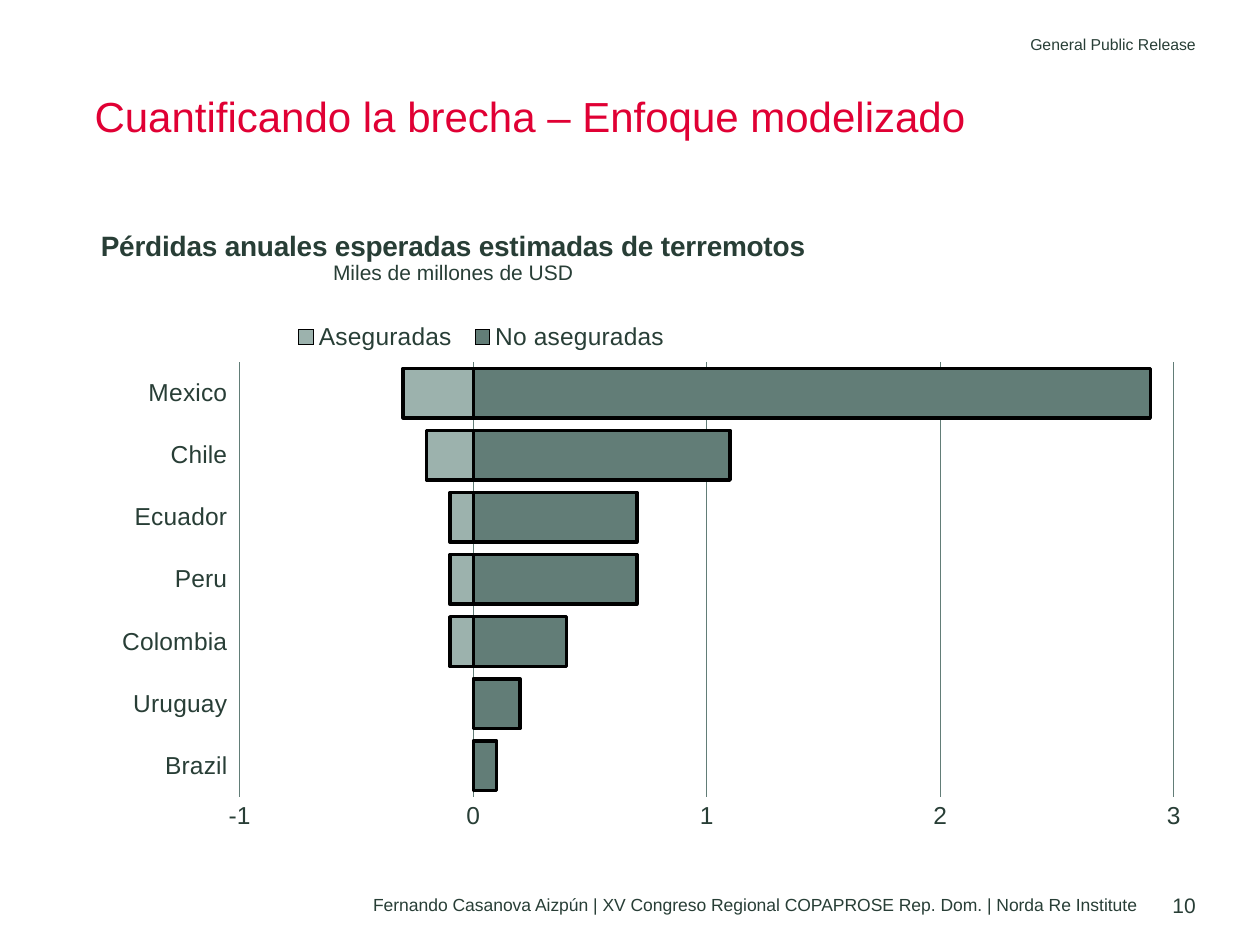
from lxml import etree
from pptx import Presentation
from pptx.chart.data import CategoryChartData
from pptx.dml.color import RGBColor
from pptx.enum.chart import XL_CHART_TYPE, XL_LEGEND_POSITION, XL_TICK_LABEL_POSITION, XL_TICK_MARK
from pptx.enum.text import MSO_ANCHOR, PP_ALIGN
from pptx.oxml.ns import qn
from pptx.util import Inches, Pt

STACKED = XL_CHART_TYPE.BAR_STACKED
LEGEND_TOP = XL_LEGEND_POSITION.TOP
LABELS_LOW = XL_TICK_LABEL_POSITION.LOW
NO_TICK = XL_TICK_MARK.NONE
TOP, BOTTOM = MSO_ANCHOR.TOP, MSO_ANCHOR.BOTTOM
LEFT, CENTER, RIGHT = PP_ALIGN.LEFT, PP_ALIGN.CENTER, PP_ALIGN.RIGHT
color = RGBColor.from_string
INK, RED, PALE, SAGE = "283E36", "E00034", "9CB2AD", "627D77"


def write(frame, text, size, ink, align, anchor):
    frame.margin_left = frame.margin_right = frame.margin_top = frame.margin_bottom = 0
    frame.word_wrap = True
    frame.vertical_anchor = anchor
    paragraph = frame.paragraphs[0]
    paragraph.alignment = align
    run = paragraph.add_run()
    run.text = text
    run.font.size = Pt(size)
    run.font.name = "Arial"
    run.font.color.rgb = color(ink)


def arrange(part, index, **shares):
    for old in part.findall(qn("c:layout")):
        part.remove(old)
    layout = etree.Element(qn("c:layout"))
    part.insert(index, layout)
    manual = etree.SubElement(layout, qn("c:manualLayout"))
    if "w" in shares and index == 0:
        etree.SubElement(manual, qn("c:layoutTarget")).set("val", "inner")
    for mode in ("xMode", "yMode"):
        etree.SubElement(manual, qn("c:" + mode)).set("val", "edge")
    for key, share in shares.items():
        etree.SubElement(manual, qn("c:" + key)).set("val", str(share))


deck = Presentation()
deck.slide_width, deck.slide_height = Inches(10), Inches(7.5)
slide = deck.slides.add_slide(deck.slide_layouts[5])
right_edge = 9.49

heading = slide.shapes.title
heading.left, heading.top = Inches(0.75), Inches(0.76)
heading.width, heading.height = Inches(right_edge - 0.75), Inches(0.76)
write(heading.text_frame, "Cuantificando la brecha – Enfoque modelizado", 24, RED, LEFT, TOP)
heading.text_frame.paragraphs[0].line_spacing = 0.9

for text, size, right, top, width, height, anchor in (
    ("General Public Release", 9, right_edge, 0.28, 6.3, 0.15, TOP),
    ("Fernando Casanova Aizpún | XV Congreso Regional COPAPROSE Rep. Dom. | Norda Re Institute",
     10, 9.02, 7.11, 6.46, 0.15, BOTTOM),
    ("10", 12, right_edge, 7.08, 0.24, 0.2, BOTTOM),
):
    margin_note = slide.shapes.add_textbox(
        Inches(right - width), Inches(top), Inches(width), Inches(height))
    write(margin_note.text_frame, text, size, INK, RIGHT, anchor)

losses = CategoryChartData(number_format="0.0")
losses.categories = ["Brazil", "Uruguay", "Colombia", "Peru", "Ecuador", "Chile", "Mexico"]
losses.add_series("Aseguradas", [0, 0, -0.1, -0.1, -0.1, -0.2, -0.3])
losses.add_series("No aseguradas", [0.1, 0.2, 0.4, 0.7, 0.7, 1.1, 2.9])
chart = slide.shapes.add_chart(
    STACKED, Inches(0.77), Inches(1.74), Inches(8.72), Inches(4.93), losses).chart
chart.font.name = "Arial"
chart.font.size = Pt(9)
chart.font.color.rgb = color(INK)

caption = chart.chart_title.text_frame
for line, (text, size, bold) in enumerate((
    ("Pérdidas anuales esperadas estimadas de terremotos", 16, True),
    ("Miles de millones de USD", 12, False),
)):
    paragraph = caption.add_paragraph() if line else caption.paragraphs[0]
    paragraph.alignment = CENTER
    run = paragraph.add_run()
    run.text = text
    run.font.size, run.font.bold, run.font.name = Pt(size), bold, "Arial"
    run.font.color.rgb = color(INK)
chart.chart_title.include_in_layout = False

chart.has_legend = True
chart.legend.position = LEGEND_TOP
chart.legend.include_in_layout = False

countries, amounts = chart.category_axis, chart.value_axis
for axis in (countries, amounts):
    axis.major_tick_mark = axis.minor_tick_mark = NO_TICK
for labelled in (countries.tick_labels, amounts.tick_labels, chart.legend):
    labelled.font.size = Pt(14)
    labelled.font.name = "Arial"
    labelled.font.color.rgb = color(INK)
countries.tick_label_position = LABELS_LOW
amounts.minimum_scale, amounts.maximum_scale, amounts.major_unit = -1, 3, 1
amounts.tick_labels.number_format = "0"
amounts.tick_labels.number_format_is_linked = False
amounts.format.line.fill.background()
amounts.has_major_gridlines = True
for rule in (countries.format.line, amounts.major_gridlines.format.line):
    rule.color.rgb = color(SAGE)
    rule.width = Pt(0.75)

bars = chart.plots[0]
bars.gap_width, bars.overlap, bars.vary_by_categories = 25, 100, False
for series, shade in zip(bars.series, (PALE, SAGE)):
    series.invert_if_negative = False
    series.format.fill.solid()
    series.format.fill.fore_color.rgb = color(shade)
    series.format.line.color.rgb = color("000000")
    series.format.line.width = Pt(2)

body = chart.element.find(qn("c:chart"))
arrange(body.find(qn("c:title")), 1, x=0, y=0.01)
arrange(body.find(qn("c:legend")), 1, x=0.17, y=0.15, w=0.36, h=0.08)
arrange(body.find(qn("c:plotArea")), 0, x=0.13, y=0.23, w=0.85, h=0.7)

deck.save("out.pptx")
